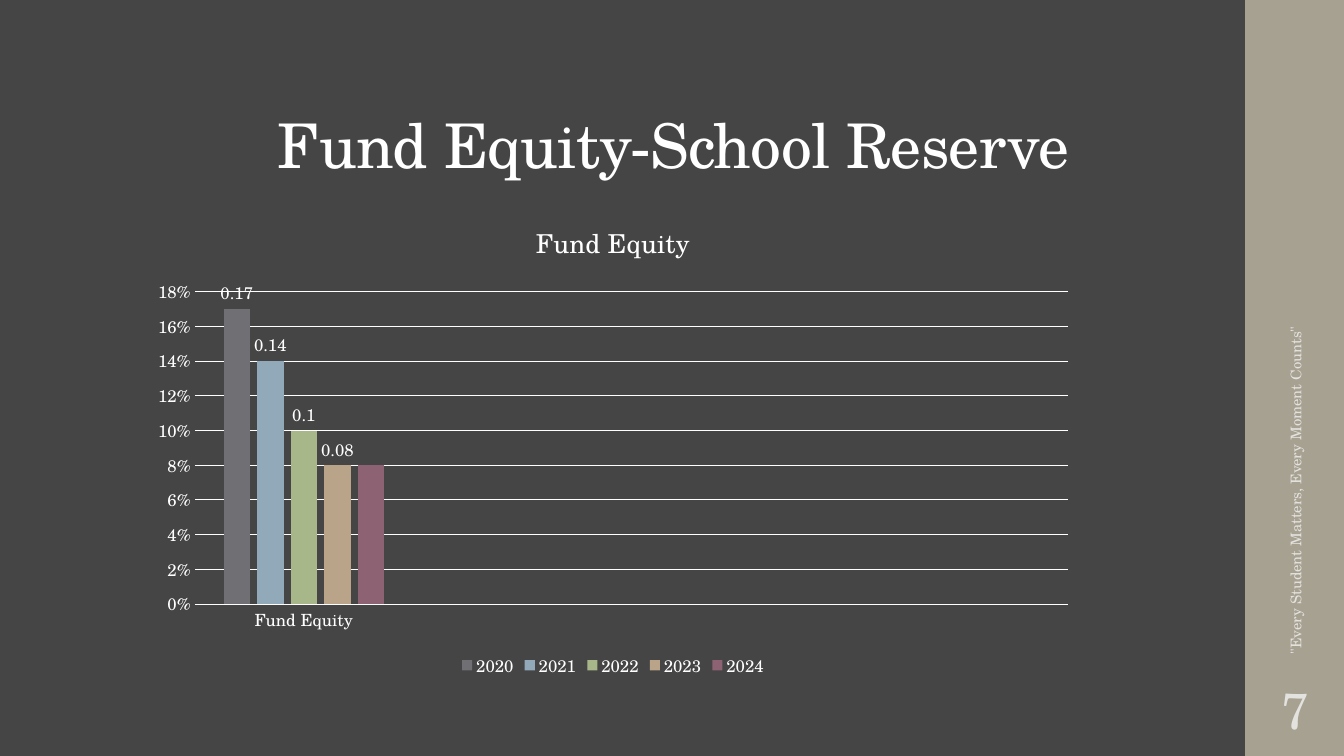
from dataclasses import dataclass

from lxml.etree import SubElement
from pptx import Presentation
from pptx.chart.data import CategoryChartData
from pptx.dml.color import RGBColor
from pptx.enum.chart import XL_CHART_TYPE, XL_LABEL_POSITION, XL_LEGEND_POSITION, XL_TICK_MARK
from pptx.enum.shapes import MSO_SHAPE
from pptx.enum.text import MSO_ANCHOR, PP_ALIGN
from pptx.oxml.ns import qn
from pptx.util import Inches, Pt


@dataclass(frozen=True)
class Theme:
    font: str = "TeX Gyre Schola"
    back: str = "454545"
    band: str = "A7A192"
    text: str = "FFFFFF"
    bars: tuple = ("6F6F74", "92A9B9", "A7B789", "B9A489", "8D6374")
    title: float = 44
    head: float = 18.6
    label: float = 12
    motto: float = 10.5
    page: float = 36


THEME = Theme()
YEARS = {"2020": 0.17, "2021": 0.14, "2022": 0.1, "2023": 0.08, "2024": 0.08}
SLOTS = 4


def paint(fill, color):
    fill.solid()
    fill.fore_color.rgb = RGBColor.from_string(color)


def style(font, size):
    font.name = THEME.font
    font.size = Pt(size)
    font.bold = False
    paint(font.fill, THEME.text)


def place(shape, left, top, width, height):
    shape.left, shape.top = Inches(left), Inches(top)
    shape.width, shape.height = Inches(width), Inches(height)


def add_title(slide, left, top, width, height):
    title = slide.shapes.title
    place(title, left, top, width, height)
    frame = title.text_frame
    frame.text = "Fund Equity-School Reserve"
    frame.word_wrap = True
    frame.vertical_anchor = MSO_ANCHOR.BOTTOM
    line = frame.paragraphs[0]
    line.alignment = PP_ALIGN.CENTER
    line.line_spacing = 0.9
    font = line.runs[0].font
    style(font, THEME.title)
    line.runs[0]._r.get_or_add_rPr().set("spc", "-50")


def add_note(slide, text, size, left, top, width, height):
    box = slide.shapes.add_textbox(
        Inches(left), Inches(top), Inches(width), Inches(height))
    frame = box.text_frame
    frame.text = text
    frame.word_wrap = True
    frame.vertical_anchor = MSO_ANCHOR.MIDDLE
    line = frame.paragraphs[0]
    line.space_after = Pt(6)
    run = line.runs[0]
    style(run.font, size)
    tint = run._r.rPr.find(".//" + qn("a:srgbClr"))
    SubElement(tint, qn("a:alpha"), val="70000")
    return box


def add_band(slide, left, top, width, height):
    band = slide.shapes.add_shape(
        MSO_SHAPE.RECTANGLE, Inches(left), Inches(top), Inches(width), Inches(height))
    band.shadow.inherit = False
    paint(band.fill, THEME.band)
    band.line.fill.background()

    long, thick = 3.92, 0.4
    motto = add_note(
        slide, '"Every Student Matters, Every Moment Counts"', THEME.motto,
        left + width / 2 - long / 2, top + 4.63 - thick / 2, long, thick)
    motto.rotation = 270

    page = add_note(slide, "7", THEME.page, left, top + height - 0.75, width, 0.65)
    frame = page.text_frame
    frame.margin_left = frame.margin_right = Inches(0.05)
    frame.margin_top = frame.margin_bottom = Inches(0.05)
    frame.paragraphs[0].alignment = PP_ALIGN.CENTER
    frame.paragraphs[0].line_spacing = 0.9


def style_axes(chart):
    for axis in (chart.category_axis, chart.value_axis):
        axis.major_tick_mark = XL_TICK_MARK.NONE
        axis.minor_tick_mark = XL_TICK_MARK.NONE
        style(axis.tick_labels.font, THEME.label)
    values = chart.value_axis
    values.minimum_scale, values.maximum_scale = 0, 0.18
    values.major_unit = 0.02
    values.tick_labels.number_format = "0%"
    values.tick_labels.number_format_is_linked = False
    values.format.line.fill.background()
    for line in (chart.category_axis.format.line, values.major_gridlines.format.line):
        paint(line.fill, THEME.text)
        line.width = Pt(0.75)


def style_bars(plot):
    plot.gap_width, plot.overlap = 219, -27
    plot.vary_by_categories = False
    for bar, color in zip(plot.series, THEME.bars):
        paint(bar.format.fill, color)
        bar.invert_if_negative = False
    for bar in list(plot.series)[:-1]:
        labels = bar.data_labels
        labels.show_value = True
        labels.position = XL_LABEL_POSITION.OUTSIDE_END
        labels.number_format = "General"
        labels.number_format_is_linked = False
        style(labels.font, THEME.label)


def add_graph(slide, left, top, width, height):
    data = CategoryChartData()
    data.categories = ["Fund Equity"] + [""] * (SLOTS - 1)
    for year, share in YEARS.items():
        data.add_series(year, [share] + [None] * (SLOTS - 1))
    chart = slide.shapes.add_chart(
        XL_CHART_TYPE.COLUMN_CLUSTERED,
        Inches(left), Inches(top), Inches(width), Inches(height), data).chart
    style(chart.font, 10)
    chart.has_title = True
    frame = chart.chart_title.text_frame
    frame.text = "Fund Equity"
    style(frame.paragraphs[0].runs[0].font, THEME.head)
    chart.chart_title.include_in_layout = False
    chart.has_legend = True
    chart.legend.position = XL_LEGEND_POSITION.BOTTOM
    chart.legend.include_in_layout = False
    style(chart.legend.font, THEME.label)
    style_axes(chart)
    style_bars(chart.plots[0])


def main():
    deck = Presentation()
    deck.slide_width, deck.slide_height = Inches(13.33), Inches(7.5)
    slide = deck.slides.add_slide(deck.slide_layouts[5])
    paint(slide.background.fill, THEME.back)
    add_band(slide, 12.35, 0, 1, 7.5)
    add_title(slide, 1.38, 0.4, 10.6, 1.45)
    add_graph(slide, 1.38, 2, 9.4, 4.76)
    deck.save("out.pptx")


if __name__ == "__main__":
    main()
